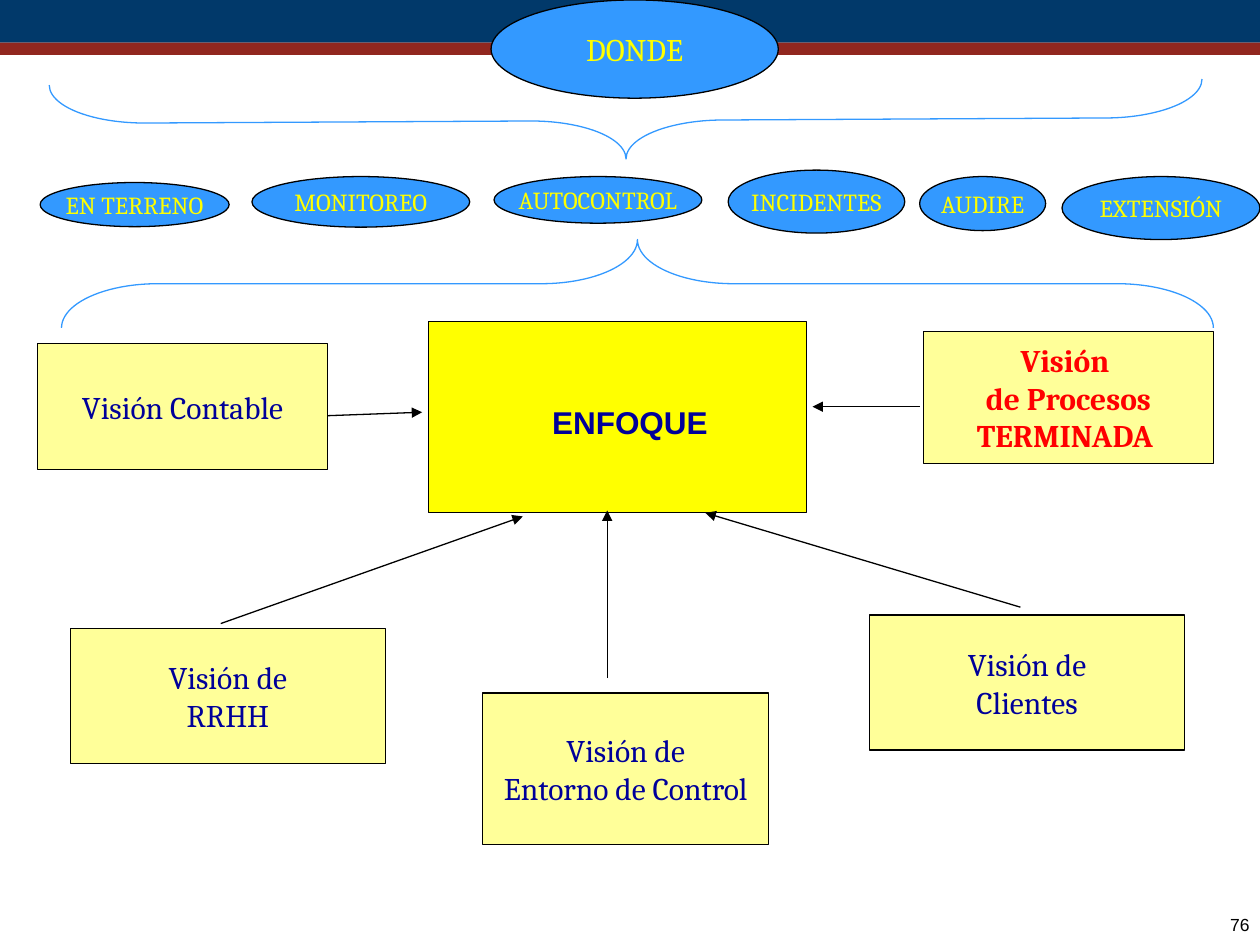
"""Build the slide on where control happens and the visions that feed its focus."""
from typing import NamedTuple, Optional

from lxml.etree import SubElement
from pptx import Presentation
from pptx.dml.color import RGBColor
from pptx.enum.shapes import MSO_CONNECTOR as Link, MSO_SHAPE as Form
from pptx.enum.text import MSO_ANCHOR as Anchor, PP_ALIGN as Align
from pptx.oxml.ns import qn
from pptx.util import Cm, Pt

NAVY = RGBColor(0x01, 0x39, 0x6A)
BRICK = RGBColor(0x91, 0x27, 0x1F)
BLACK = RGBColor(0, 0, 0)
YELLOW = RGBColor(0xFF, 0xFF, 0)
CREAM = RGBColor(0xFF, 0xFF, 0x99)
BLUE = RGBColor(0x33, 0x99, 0xFF)
INK = RGBColor(0, 0, 0x99)
RED = RGBColor(0xFF, 0, 0)
HAIRLINE = Pt(0.75)


class Area(NamedTuple):
    """Left, top, width and height in centimetres."""
    left: float
    top: float
    width: float
    height: float

    def lengths(self) -> list:
        """Give the four values as lengths."""
        return [Cm(value) for value in self]


class Style(NamedTuple):
    """Look of a text."""
    size: int
    color: RGBColor
    font: str = "Cambria"
    bold: bool = False
    align: Align = Align.CENTER


class Node(NamedTuple):
    """Labelled shape of the diagram."""
    area: Area
    text: str
    style: Style
    form: Form = Form.RECTANGLE
    fill: RGBColor = CREAM


class Brace(NamedTuple):
    """Curly brace turned to lie across the page."""
    form: Form
    area: Area
    rotation: float
    curl: float


class Arrow(NamedTuple):
    """Straight arrow between two points in centimetres."""
    start: tuple
    end: tuple


VISION = Style(18, INK)
FINISHED = Style(18, RED, bold=True)
PLACE = Style(14, YELLOW)
HEADING = Style(18, YELLOW)
FOCUS = Style(18, INK, "Arial", True)
NUMBER = Style(10, BLACK, "Arial", align=Align.RIGHT)

BANDS = [(Area(0, 0, 25.4, 0.86), NAVY), (Area(0, 0.86, 25.4, 0.25), BRICK)]
VISIONS = [
    Node(Area(18.62, 6.68, 5.84, 2.67), "Visión \nde Procesos\nTERMINADA ", FINISHED),
    Node(Area(9.73, 13.97, 5.77, 3.05), "Visión de\nEntorno de Control", VISION),
    Node(Area(0.76, 6.93, 5.84, 2.54), "Visión Contable", VISION),
    Node(Area(17.53, 12.4, 6.35, 2.72), "Visión de\nClientes", VISION),
    Node(Area(1.42, 12.67, 6.35, 2.72), "Visión de\nRRHH", VISION),
]
PLACES = [
    Node(Area(*area), text, style, Form.OVAL, BLUE)
    for text, style, area in [
        ("DONDE", HEADING, (9.9, 0, 5.79, 1.98)),
        ("EN TERRENO", PLACE, (0.81, 3.68, 3.81, 0.89)),
        ("MONITOREO", PLACE, (5.08, 3.56, 4.39, 1.02)),
        ("AUTOCONTROL", PLACE, (9.96, 3.56, 4.19, 0.94)),
        ("INCIDENTES", PLACE, (14.68, 3.43, 3.56, 1.27)),
        ("AUDIRE", PLACE, (18.54, 3.56, 2.54, 1.09)),
        ("EXTENSIÓN", PLACE, (21.41, 3.56, 3.99, 1.27)),
    ]
]
BRACES = [
    Brace(Form.RIGHT_BRACE, Area(11.84, -9.19, 1.55, 23.24), 89.7, 1.25),
    Brace(Form.LEFT_BRACE, Area(11.96, -5.89, 1.78, 23.22), 90, 1.09),
]
ARROWS = [
    Arrow((6.6, 8.38), (8.51, 8.31)),
    Arrow((18.54, 8.2), (16.38, 8.2)),
    Arrow((12.24, 13.67), (12.24, 10.29)),
    Arrow((4.45, 12.57), (10.54, 10.41)),
    Arrow((20.57, 12.24), (14.22, 10.34)),
]


def write(box, text: str, style: Style, wrap: bool = False) -> None:
    """Fill a shape with styled paragraphs."""
    frame = box.text_frame
    frame.text = text
    frame.word_wrap = wrap
    frame.vertical_anchor = Anchor.MIDDLE
    for para in frame.paragraphs:
        para.alignment = style.align
        para.font.size = Pt(style.size)
        para.font.name = style.font
        para.font.bold = style.bold
        para.font.color.rgb = style.color


def draw_shape(page, form: Form, area: Area, fill: Optional[RGBColor] = None,
               line: Optional[RGBColor] = None):
    """Draw a preset shape without shadow."""
    shape = page.shapes.add_shape(form, *area.lengths())
    shape.shadow.inherit = False
    if fill is None:
        shape.fill.background()
    else:
        shape.fill.solid()
        shape.fill.fore_color.rgb = fill
    if line is None:
        shape.line.fill.background()
    else:
        shape.line.color.rgb = line
        shape.line.width = HAIRLINE
    return shape


def draw_node(page, node: Node) -> None:
    """Draw a labelled, outlined shape."""
    write(draw_shape(page, node.form, node.area, node.fill, BLACK), node.text, node.style)


def draw_brace(page, brace: Brace) -> None:
    """Draw a rotated brace."""
    shape = draw_shape(page, brace.form, brace.area, line=BLUE)
    shape.rotation = brace.rotation
    shape.adjustments[0] = brace.curl


def draw_arrow(page, arrow: Arrow) -> None:
    """Draw a thin line with a triangular head."""
    points = [Cm(value) for value in arrow.start + arrow.end]
    connector = page.shapes.add_connector(Link.STRAIGHT, *points)
    connector.line.color.rgb = BLACK
    connector.line.width = HAIRLINE
    SubElement(connector.line._get_or_add_ln(), qn("a:tailEnd"), type="triangle")
    SubElement(connector._element.spPr, qn("a:effectLst"))


def draw_text(page, area: Area, text: str, style: Style) -> None:
    """Draw a text box without margins."""
    box = page.shapes.add_textbox(*area.lengths())
    frame = box.text_frame
    frame.margin_left = frame.margin_right = frame.margin_top = frame.margin_bottom = 0
    write(box, text, style, wrap=True)


def main() -> None:
    """Assemble and save the deck."""
    deck = Presentation()
    deck.slide_width, deck.slide_height = Cm(25.4), Cm(19.05)
    page = deck.slides.add_slide(deck.slide_layouts[6])
    for area, color in BANDS:
        draw_shape(page, Form.RECTANGLE, area, color)
    draw_text(page, Area(20.95, 18.42, 4.24, 0.43), "76", NUMBER)
    draw_shape(page, Form.RECTANGLE, Area(8.64, 6.48, 7.62, 3.86), YELLOW, BLACK)
    draw_text(page, Area(8.51, 8, 8.38, 1.02), "ENFOQUE", FOCUS)
    for node in VISIONS + PLACES:
        draw_node(page, node)
    for brace in BRACES:
        draw_brace(page, brace)
    for arrow in ARROWS:
        draw_arrow(page, arrow)
    deck.save("out.pptx")


if __name__ == "__main__":
    main()
